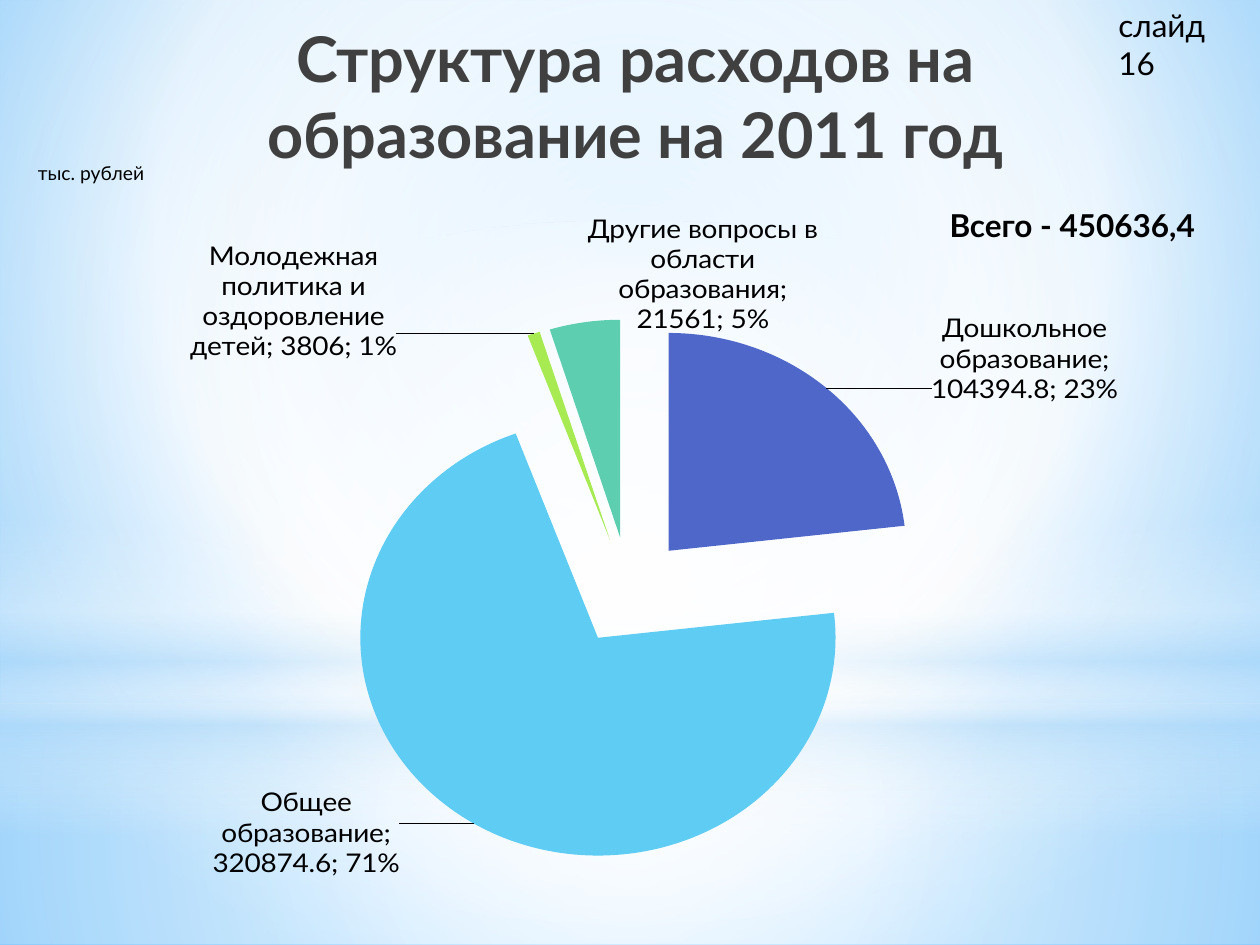
import lxml.etree
import pptx
import pptx.chart.data
import pptx.dml.color
import pptx.enum.chart
import pptx.enum.shapes
import pptx.enum.text
import pptx.oxml
import pptx.oxml.ns
import pptx.util

Pt = pptx.util.Pt
qn = pptx.oxml.ns.qn
FONT = "Lato"
CENTER = (50, 50, 50, 50)
SPENDING = [
    ("Дошкольное образование", 104394.8, "4E67C8", (0.085, 0.03)),
    ("Общее образование", 320874.6, "5ECCF3", (-0.06, -0.05)),
    ("Молодежная политика и оздоровление детей", 3806, "A7EA52", (-0.115, 0.05)),
    ("Другие вопросы в области образования", 21561, "5DCEAF", (0.2, 0.01)),
]


def color(value):
    """Return an RGB color from a hex string."""
    return pptx.dml.color.RGBColor.from_string(value)


def gradient(parent, stops, focus=None):
    """Swap the solid fill of parent for a radial or a vertical gradient."""
    fill = lxml.etree.Element(qn("a:gradFill"), rotWithShape="1")
    gs_list = lxml.etree.SubElement(fill, qn("a:gsLst"))
    for pos, value, alpha in stops:
        gs = lxml.etree.SubElement(gs_list, qn("a:gs"), pos=str(pos * 1000))
        clr = lxml.etree.SubElement(gs, qn("a:srgbClr"), val=value)
        lxml.etree.SubElement(clr, qn("a:alpha"), val=str(alpha * 1000))
    if focus:
        shade = lxml.etree.SubElement(fill, qn("a:path"), path="circle")
        sides = {side: str(v * 1000) for side, v in zip("ltrb", focus)}
        lxml.etree.SubElement(shade, qn("a:fillToRect"), **sides)
    else:
        lxml.etree.SubElement(fill, qn("a:lin"), ang="5400000", scaled="0")
    parent.replace(parent.find(qn("a:solidFill")), fill)


def add_background(slide):
    """Fill the slide background with a radial gradient."""
    slide.background.fill.solid()
    bg = slide.element.find(".//" + qn("p:bgPr"))
    stops = [(0, "9ED5FF", 100), (60, "FFFFFF", 100), (100, "5BB9FF", 100)]
    gradient(bg, stops, (20, 10, 20, 60))


def add_glow(slide, kind, top, height, stops, focus=None):
    """Add a full-width borderless shape with a gradient fill."""
    sp = slide.shapes.add_shape(kind, 0, Pt(top), Pt(720), Pt(height))
    sp.shadow.inherit = False
    sp.line.fill.background()
    sp.fill.solid()
    gradient(sp.element.spPr, stops, focus)


def add_text(slide, text, box, size, bold=False, value="000000", wrap=True):
    """Add a text box and return its text frame."""
    tf = slide.shapes.add_textbox(*map(Pt, box)).text_frame
    tf.word_wrap = wrap
    tf.text = text
    font = tf.paragraphs[0].runs[0].font
    font.name, font.size, font.bold = FONT, Pt(size), bold
    font.color.rgb = color(value)
    return tf


def manual_layout(**values):
    """Return a chart layout element with the given settings."""
    layout = lxml.etree.Element(qn("c:layout"))
    manual = lxml.etree.SubElement(layout, qn("c:manualLayout"))
    for name, value in values.items():
        lxml.etree.SubElement(manual, qn("c:" + name), val=str(value))
    return layout


def show_parts(labels):
    """Show category, value and percentage, parted by semicolons."""
    for name in ("showVal", "showCatName", "showPercent"):
        labels.find(qn("c:" + name)).set("val", "1")
    separator = lxml.etree.Element(qn("c:separator"))
    separator.text = "; "
    last = labels.find(qn("c:showBubbleSize"))
    if last is None:
        last = labels.find(qn("c:showPercent"))
    last.addnext(separator)


def format_slice(series, index, value, offset):
    """Color one slice and move its label."""
    point = series.points[index]
    point.format.fill.solid()
    point.format.fill.fore_color.rgb = color(value)
    label = point.data_label
    label.position = pptx.enum.chart.XL_LABEL_POSITION.OUTSIDE_END
    font = label.font
    font.name, font.size = FONT, Pt(16)
    font.color.rgb = color("000000")
    dlbl = series._element.findall(".//" + qn("c:dLbl"))[index]
    for old in dlbl.findall(qn("c:layout")):
        dlbl.remove(old)
    dlbl.find(qn("c:idx")).addnext(manual_layout(x=offset[0], y=offset[1]))
    show_parts(dlbl)


def add_pie(slide, box):
    """Add the exploded pie chart of spending."""
    data = pptx.chart.data.CategoryChartData()
    data.categories = [row[0] for row in SPENDING]
    data.add_series("Series 1", [row[1] for row in SPENDING])
    kind = pptx.enum.chart.XL_CHART_TYPE.PIE
    chart = slide.shapes.add_chart(kind, *map(Pt, box), data).chart
    chart.has_legend = chart.has_title = False
    chart.font.name, chart.font.size = FONT, Pt(18)
    chart.font.color.rgb = color("000000")
    chart.plots[0].vary_by_categories = True
    series = chart.plots[0].series[0]
    series.data_labels.font.size = Pt(16)
    for index, (_, _, value, offset) in enumerate(SPENDING):
        format_slice(series, index, value, offset)
    show_parts(series.data_labels._element)
    explosion = lxml.etree.Element(qn("c:explosion"), val="25")
    series._element.find(qn("c:tx")).addnext(explosion)
    area = chart._chartSpace.find(".//" + qn("c:plotArea"))
    for old in area.findall(qn("c:layout")):
        area.remove(old)
    area.insert(0, manual_layout(layoutTarget="inner", xMode="edge", yMode="edge",
                                 x=0.08, y=0.16, w=0.84, h=0.82))


def main():
    """Build the slide and save it."""
    prs = pptx.Presentation()
    prs.slide_width, prs.slide_height = Pt(720), Pt(540)
    slide = prs.slides.add_slide(prs.slide_layouts[6])
    add_background(slide)
    rect = pptx.enum.shapes.MSO_SHAPE.RECTANGLE
    oval = pptx.enum.shapes.MSO_SHAPE.OVAL
    add_glow(slide, rect, 402, 138,
             [(0, "FFFFFF", 91), (37, "FFFFFF", 76), (100, "B4DCFA", 79)], CENTER)
    add_glow(slide, rect, 0, 402,
             [(0, "FFFFFF", 89), (48, "FFFFFF", 62), (100, "B4DCFA", 79)], CENTER)
    add_glow(slide, rect, 297, 180,
             [(0, "FFFFFF", 0), (29, "FFFFFF", 30), (45, "B4DCFA", 40),
              (55, "FFFFFF", 26), (65, "B4DCFA", 60), (100, "FFFFFF", 0)])
    add_glow(slide, oval, 126, 402, [(0, "FFFFFF", 100), (56, "FFFFFF", 0)], CENTER)

    tf = add_text(slide, "Структура расходов на образование на 2011 год",
                  (54, 9.5, 618, 90), 36, True, "404040")
    tf.margin_left = tf.margin_right = Pt(15)
    tf.vertical_anchor = pptx.enum.text.MSO_ANCHOR.MIDDLE
    tf.paragraphs[0].alignment = pptx.enum.text.PP_ALIGN.CENTER
    add_pie(slide, (25, 111.5, 669, 414))
    add_text(slide, "тыс. рублей", (14.5, 88.5, 79, 22), 11, wrap=False)
    add_text(slide, "Всего - 450636,4", (535.5, 114, 175.5, 29), 18, True)
    tf = add_text(slide, "слайд 16", (632, 0, 88, 29), 18)
    tf.margin_right = Pt(15)
    prs.save("out.pptx")


if __name__ == "__main__":
    main()
